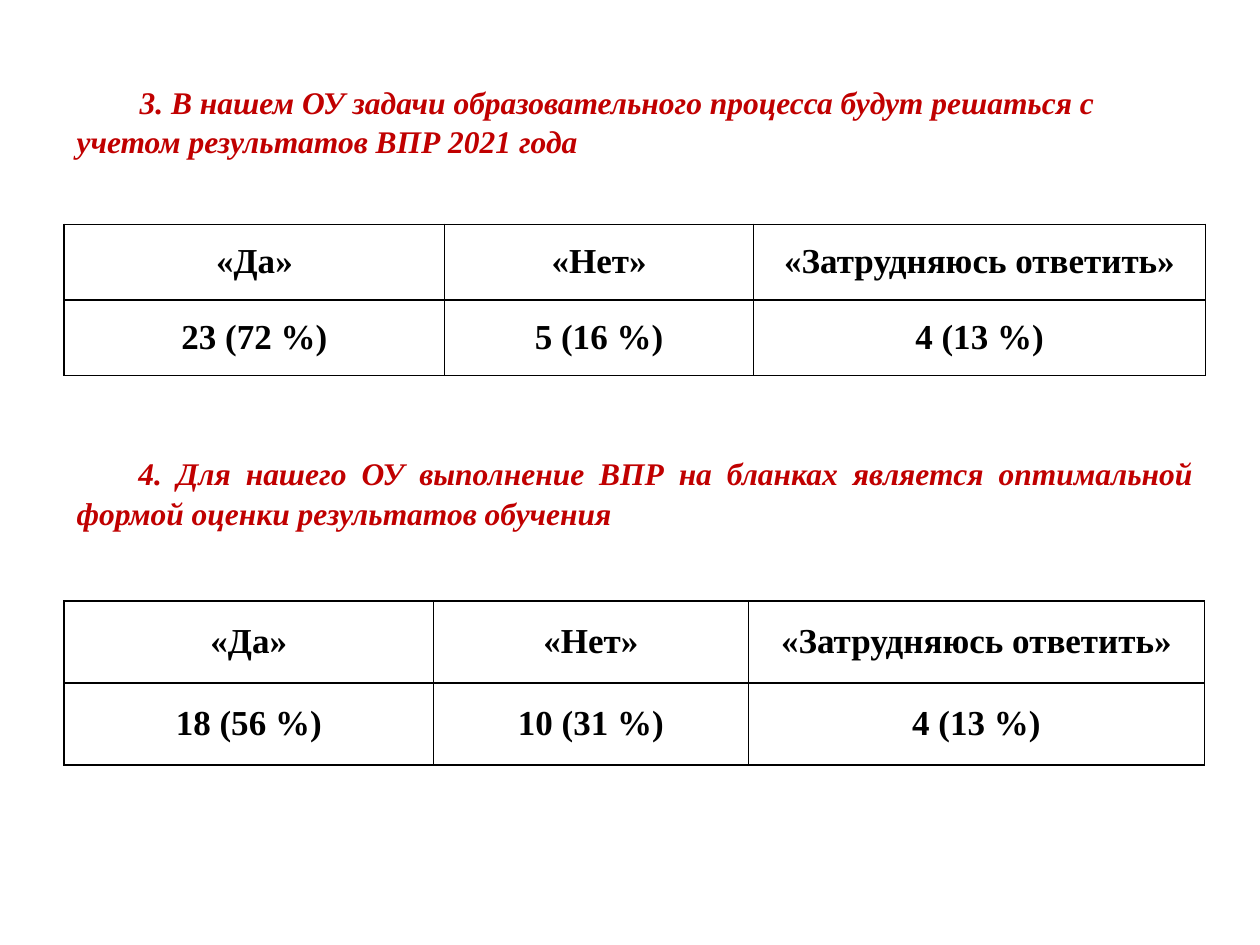
from lxml.etree import SubElement
from pptx import Presentation
from pptx.dml.color import RGBColor
from pptx.enum.shapes import MSO_SHAPE
from pptx.enum.text import MSO_ANCHOR, PP_ALIGN
from pptx.oxml.ns import qn
from pptx.util import Inches, Pt

RED = RGBColor(0xC0, 0x00, 0x00)
BLACK = RGBColor(0x00, 0x00, 0x00)
WHITE = RGBColor(0xFF, 0xFF, 0xFF)
LEFT, WIDTH = Inches(0.51), Inches(9.06)
ANSWERS = ["«Да»", "«Нет»", "«Затрудняюсь ответить»"]

QUESTIONS = [
    ("3. В нашем ОУ задачи образовательного процесса будут решаться с учетом результатов ВПР 2021 года",
     0.6, PP_ALIGN.LEFT, 0.5, 1.78, [3.02, 2.45, 3.59], 0.6,
     ["23 (72 %)", "5 (16 %)", "4 (13 %)"]),
    ("4. Для нашего ОУ выполнение ВПР на бланках является оптимальной формой оценки результатов обучения",
     3.55, PP_ALIGN.JUSTIFY, 0.49, 4.77, [2.93, 2.5, 3.62], 0.65,
     ["18 (56 %)", "10 (31 %)", "4 (13 %)"]),
]


def add_text(p, text, size, color, align, italic=False):
    p.alignment = align
    r = p.add_run()
    r.text = text
    r.font.name = "Times New Roman"
    r.font.size = Pt(size)
    r.font.bold = True
    r.font.italic = italic
    r.font.color.rgb = color


def add_borders(cell):
    tcPr = cell._tc.get_or_add_tcPr()
    for side in ("a:lnL", "a:lnR", "a:lnT", "a:lnB"):
        ln = SubElement(tcPr, qn(side), w=str(Pt(1)))
        fill = SubElement(ln, qn("a:solidFill"))
        SubElement(fill, qn("a:srgbClr"), val=str(BLACK))


prs = Presentation()
prs.slide_width, prs.slide_height = Inches(10), Inches(7.5)
s = prs.slides.add_slide(prs.slide_layouts[6])

for question, top, align, indent, table_top, widths, row_height, counts in QUESTIONS:
    sp = s.shapes.add_shape(MSO_SHAPE.RECTANGLE, LEFT, Inches(top), WIDTH, Inches(0.71))
    sp.shadow.inherit = False
    sp.fill.solid()
    sp.fill.fore_color.rgb = WHITE
    sp.line.color.rgb = WHITE
    sp.line.width = Pt(0.75)
    tf = sp.text_frame
    tf.word_wrap = True
    tf.vertical_anchor = MSO_ANCHOR.MIDDLE
    p = tf.paragraphs[0]
    p.line_spacing = 1.05
    p._p.get_or_add_pPr().set("indent", str(Inches(indent)))
    add_text(p, question, 18, RED, align, italic=True)

    table = s.shapes.add_table(2, 3, LEFT, Inches(table_top), WIDTH, Inches(2 * row_height)).table
    table.first_row = False
    table.horz_banding = False
    for column, width in zip(table.columns, widths):
        column.width = Inches(width)
    for i, values in enumerate([ANSWERS, counts]):
        table.rows[i].height = Inches(row_height)
        for j, value in enumerate(values):
            cell = table.cell(i, j)
            cell.vertical_anchor = MSO_ANCHOR.MIDDLE
            cell.margin_left = cell.margin_right = Inches(0.07)
            cell.margin_top = cell.margin_bottom = 0
            add_borders(cell)
            cell.fill.background()
            add_text(cell.text_frame.paragraphs[0], value, 20, BLACK, PP_ALIGN.CENTER)

prs.save("out.pptx")
